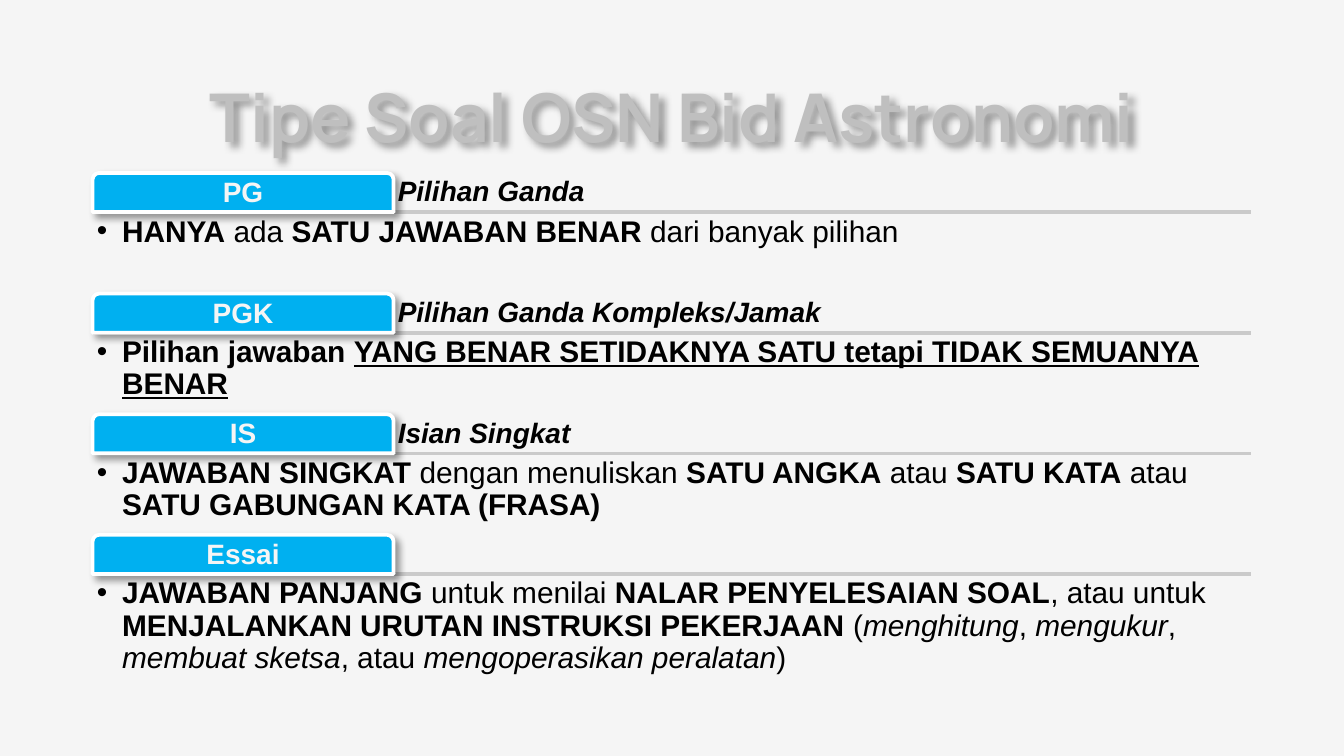
from lxml.etree import SubElement
from pptx import Presentation
from pptx.dml.color import RGBColor
from pptx.enum.shapes import MSO_CONNECTOR, MSO_SHAPE
from pptx.enum.text import MSO_ANCHOR, PP_ALIGN
from pptx.oxml.ns import qn
from pptx.util import Cm, Pt

SECTIONS = [
    ("PG", "Pilihan Ganda", [
        ("HANYA", "b"), (" ada ", ""), ("SATU JAWABAN BENAR", "b"),
        (" dari banyak pilihan", "")]),
    ("PGK", "Pilihan Ganda Kompleks/Jamak", [
        ("Pilihan jawaban ", "b"),
        ("YANG BENAR SETIDAKNYA SATU tetapi TIDAK SEMUANYA BENAR", "bu")]),
    ("IS", "Isian Singkat", [
        ("JAWABAN SINGKAT", "b"), (" dengan menuliskan ", ""),
        ("SATU ANGKA", "b"), (" atau ", ""), ("SATU KATA", "b"),
        (" atau ", ""), ("SATU GABUNGAN KATA (FRASA)", "b")]),
    ("Essai", "", [
        ("JAWABAN PANJANG", "b"), (" untuk menilai ", ""),
        ("NALAR PENYELESAIAN SOAL", "b"), (", atau untuk ", ""),
        ("MENJALANKAN URUTAN INSTRUKSI PEKERJAAN", "b"), (" (", ""),
        ("menghitung", "i"), (", ", ""), ("mengukur", "i"), (", ", ""),
        ("membuat sketsa", "i"), (", atau ", ""),
        ("mengoperasikan peralatan", "i"), (")", "")]),
]


def color(value):
    """Turn a hex string into a colour."""
    return RGBColor.from_string(value)


def add_shadow(shape):
    """Give a shape a soft shadow towards the lower right."""
    effects = SubElement(shape._element.spPr, qn("a:effectLst"))
    shadow = SubElement(effects, qn("a:outerShdw"), blurRad=str(Pt(4)),
                        dist=str(Pt(3)), dir="2700000", algn="tl", rotWithShape="0")
    black = SubElement(shadow, qn("a:srgbClr"), val="000000")
    SubElement(black, qn("a:alpha"), val="40000")


def set_frame(shape, inset, anchor):
    """Set wrapping, insets and anchor, and return the first paragraph."""
    frame = shape.text_frame
    frame.word_wrap = True
    frame.vertical_anchor = anchor
    frame.margin_left = frame.margin_right = Cm(inset)
    frame.margin_top = frame.margin_bottom = Cm(inset)
    return frame.paragraphs[0]


def set_font(paragraph, size, value, bold=None, italic=None, name="Arial"):
    """Set the font shared by the runs of a paragraph."""
    font = paragraph.font
    font.name, font.size, font.bold, font.italic = name, Pt(size), bold, italic
    font.color.rgb = color(value)


def add_title(slide, left, top, width, height):
    """Place the shadowed slide title."""
    box = slide.shapes.add_textbox(Cm(left), Cm(top), Cm(width), Cm(height))
    paragraph = set_frame(box, 0.25, MSO_ANCHOR.TOP)
    paragraph.text = "Tipe Soal OSN Bid Astronomi"
    paragraph.alignment = PP_ALIGN.CENTER
    set_font(paragraph, 36, "BFBFBF", bold=True, name="Manrope")
    add_shadow(box)


def add_rule(slide, left, top, width):
    """Draw the grey line under a section heading."""
    rule = slide.shapes.add_connector(
        MSO_CONNECTOR.STRAIGHT, Cm(left), Cm(top), Cm(left + width), Cm(top))
    rule.line.color.rgb = color("CACACA")
    rule.line.width = Pt(2)
    SubElement(rule._element.spPr, qn("a:effectLst"))


def add_tab(slide, label, left, top, width, height):
    """Place the blue tab with its label."""
    tab = slide.shapes.add_shape(
        MSO_SHAPE.ROUND_2_SAME_RECTANGLE, Cm(left), Cm(top), Cm(width), Cm(height))
    tab.fill.solid()
    tab.fill.fore_color.rgb = color("00B0F0")
    tab.line.color.rgb = color("FFFFFF")
    tab.line.width = Pt(2)
    add_shadow(tab)
    paragraph = set_frame(tab, 0.08, MSO_ANCHOR.MIDDLE)
    paragraph.text = label
    paragraph.alignment = PP_ALIGN.CENTER
    paragraph.line_spacing = 0.9
    set_font(paragraph, 15, "F5F5F5", bold=True)


def add_heading(slide, text, left, top, width, height):
    """Place the italic heading beside a tab."""
    box = slide.shapes.add_textbox(Cm(left), Cm(top), Cm(width), Cm(height))
    paragraph = set_frame(box, 0.08, MSO_ANCHOR.BOTTOM)
    paragraph.text = text
    paragraph.line_spacing = 0.9
    set_font(paragraph, 15, "000000", bold=True, italic=True)


def add_description(slide, runs, left, top, width, height):
    """Place the bulleted description under a heading."""
    box = slide.shapes.add_textbox(Cm(left), Cm(top), Cm(width), Cm(height))
    paragraph = set_frame(box, 0.08, MSO_ANCHOR.TOP)
    paragraph.line_spacing = 0.9
    properties = paragraph._p.get_or_add_pPr()
    properties.set("marL", str(Cm(0.48)))
    properties.set("indent", str(-Cm(0.48)))
    bullet_color = SubElement(properties, qn("a:buClr"))
    SubElement(bullet_color, qn("a:srgbClr"), val="000000")
    SubElement(properties, qn("a:buFont"), typeface="Arial")
    SubElement(properties, qn("a:buChar"), char="•")
    set_font(paragraph, 16, "000000")
    for text, style in runs:
        run = paragraph.add_run()
        run.text = text
        run.font.bold = "b" in style
        run.font.italic = "i" in style
        run.font.underline = "u" in style


def add_section(slide, section, left, top, width, height):
    """Place one question type: rule, heading, tab and description."""
    label, heading, runs = section
    tab_width, tab_height = 5.69, 0.74
    body_top = top + tab_height
    add_rule(slide, left, body_top, width)
    if heading:
        add_heading(slide, heading, left + tab_width, top, width - tab_width, tab_height)
    add_tab(slide, label, left, top, tab_width, tab_height)
    add_description(slide, runs, left, body_top, width, height - tab_height)


def main():
    """Build and save the presentation."""
    presentation = Presentation()
    presentation.slide_width, presentation.slide_height = Cm(25.4), Cm(14.29)
    slide = presentation.slides.add_slide(presentation.slide_layouts[6])
    slide.background.fill.solid()
    slide.background.fill.fore_color.rgb = color("F5F5F5")
    add_title(slide, 2, 1.17, 21.4, 1.6)
    pitch = 2.28
    for index, section in enumerate(SECTIONS):
        add_section(slide, section, 1.75, 3.27 + index * pitch, 21.9, 2.24)
    presentation.save("out.pptx")


if __name__ == "__main__":
    main()
